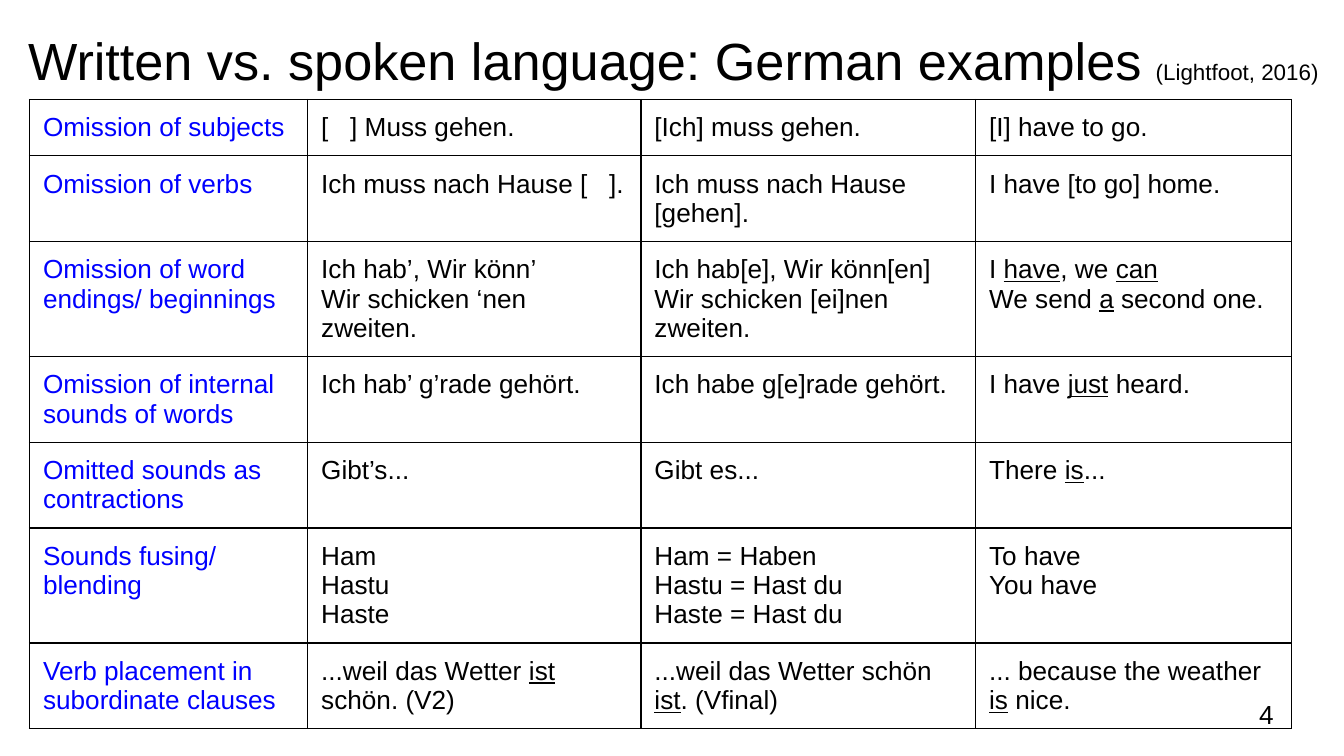
import dataclasses

import pptx
import pptx.dml.color
import pptx.enum.text
import pptx.oxml
import pptx.oxml.ns
import pptx.util

Pt = pptx.util.Pt


@dataclasses.dataclass(frozen=True)
class Theme:
    font: str = "Arial"
    text: str = "000000"
    label: str = "0000FF"
    title_size: float = 28
    citation_size: float = 12
    body_size: float = 14
    inset: float = 7.2
    border_width: float = 0.75


@dataclasses.dataclass(frozen=True)
class Box:
    left: float
    top: float
    width: float
    height: float

    def lengths(self):
        return [Pt(value) for value in dataclasses.astuple(self)]


THEME = Theme()
COLUMN_WIDTHS = [149.04, 178.56, 179.28, 169.2]
ROW_HEIGHT = 30.24
UNDERLINE_MARK = "_"

EXAMPLES = [
    ["Omission of subjects", "[   ] Muss gehen.", "[Ich] muss gehen.", "[I] have to go."],
    ["Omission of verbs", "Ich muss nach Hause [   ].", "Ich muss nach Hause [gehen].",
     "I have [to go] home."],
    ["Omission of word endings/ beginnings",
     "Ich hab’, Wir könn’\nWir schicken ‘nen zweiten.",
     "Ich hab[e], Wir könn[en]\nWir schicken [ei]nen zweiten.",
     "I _have_, we _can_\nWe send _a_ second one."],
    ["Omission of internal sounds of words", "Ich hab’ g’rade gehört.",
     "Ich habe g[e]rade gehört.", "I have _just_ heard."],
    ["Omitted sounds as contractions", "Gibt’s...", "Gibt es...", "There _is_..."],
    ["Sounds fusing/ blending", "Ham\nHastu\nHaste",
     "Ham = Haben\nHastu = Hast du\nHaste = Hast du", "To have\nYou have"],
    ["Verb placement in subordinate clauses", "...weil das Wetter _ist_ schön. (V2)",
     "...weil das Wetter schön _ist_. (Vfinal)", "... because the weather _is_ nice."],
]


def style_font(font, size, color):
    font.name = THEME.font
    font.size = Pt(size)
    font.color.rgb = pptx.dml.color.RGBColor.from_string(color)


def set_insets(holder):
    for side in ("left", "top", "right", "bottom"):
        setattr(holder, f"margin_{side}", Pt(THEME.inset))


def write_lines(text_frame, text, color):
    for index, line in enumerate(text.split("\n")):
        paragraph = text_frame.paragraphs[0] if index == 0 else text_frame.add_paragraph()
        style_font(paragraph.font, THEME.body_size, color)
        for position, part in enumerate(line.split(UNDERLINE_MARK)):
            if part:
                run = paragraph.add_run()
                run.text = part
                if position % 2:
                    run.font.underline = True


def add_borders(cell):
    properties = cell._tc.get_or_add_tcPr()
    for position, side in enumerate(("lnL", "lnR", "lnT", "lnB")):
        properties.insert(position, pptx.oxml.parse_xml(
            f'<a:{side} {pptx.oxml.ns.nsdecls("a")} w="{Pt(THEME.border_width)}">'
            f'<a:solidFill><a:srgbClr val="{THEME.text}"/></a:solidFill></a:{side}>'))


def place_title(slide, box):
    title = slide.shapes.title
    title.left, title.top, title.width, title.height = box.lengths()
    text_frame = title.text_frame
    text_frame.word_wrap = True
    text_frame.auto_size = pptx.enum.text.MSO_AUTO_SIZE.NONE
    text_frame.vertical_anchor = pptx.enum.text.MSO_ANCHOR.TOP
    set_insets(text_frame)
    paragraph = text_frame.paragraphs[0]
    paragraph.alignment = pptx.enum.text.PP_ALIGN.LEFT
    for text, size in (
        ("Written vs. spoken language: German examples ", THEME.title_size),
        ("(Lightfoot, 2016)", THEME.citation_size),
    ):
        run = paragraph.add_run()
        run.text = text
        style_font(run.font, size, THEME.text)


def place_examples(slide, box):
    table = slide.shapes.add_table(
        len(EXAMPLES), len(COLUMN_WIDTHS), *box.lengths()).table
    table.first_row = False
    table.horz_banding = False
    for column, width in zip(table.columns, COLUMN_WIDTHS):
        column.width = Pt(width)
    for row, texts in zip(table.rows, EXAMPLES):
        row.height = Pt(ROW_HEIGHT)
        for index, (cell, text) in enumerate(zip(row.cells, texts)):
            set_insets(cell)
            cell.fill.background()
            add_borders(cell)
            write_lines(cell.text_frame, text, THEME.text if index else THEME.label)


def place_page_number(slide, box):
    text_frame = slide.shapes.add_textbox(*box.lengths()).text_frame
    text_frame.word_wrap = True
    text_frame.vertical_anchor = pptx.enum.text.MSO_ANCHOR.MIDDLE
    set_insets(text_frame)
    write_lines(text_frame, "4", THEME.text)


def main():
    presentation = pptx.Presentation()
    presentation.slide_width = Pt(720)
    presentation.slide_height = Pt(405)
    slide = presentation.slides.add_slide(presentation.slide_layouts[5])
    place_title(slide, Box(7.92, 7.92, 720, 45.36))
    place_examples(
        slide, Box(15.84, 53.28, sum(COLUMN_WIDTHS), ROW_HEIGHT * len(EXAMPLES)))
    place_page_number(slide, Box(667.44, 367.2, 43.2, 30.96))
    presentation.save("out.pptx")


if __name__ == "__main__":
    main()
